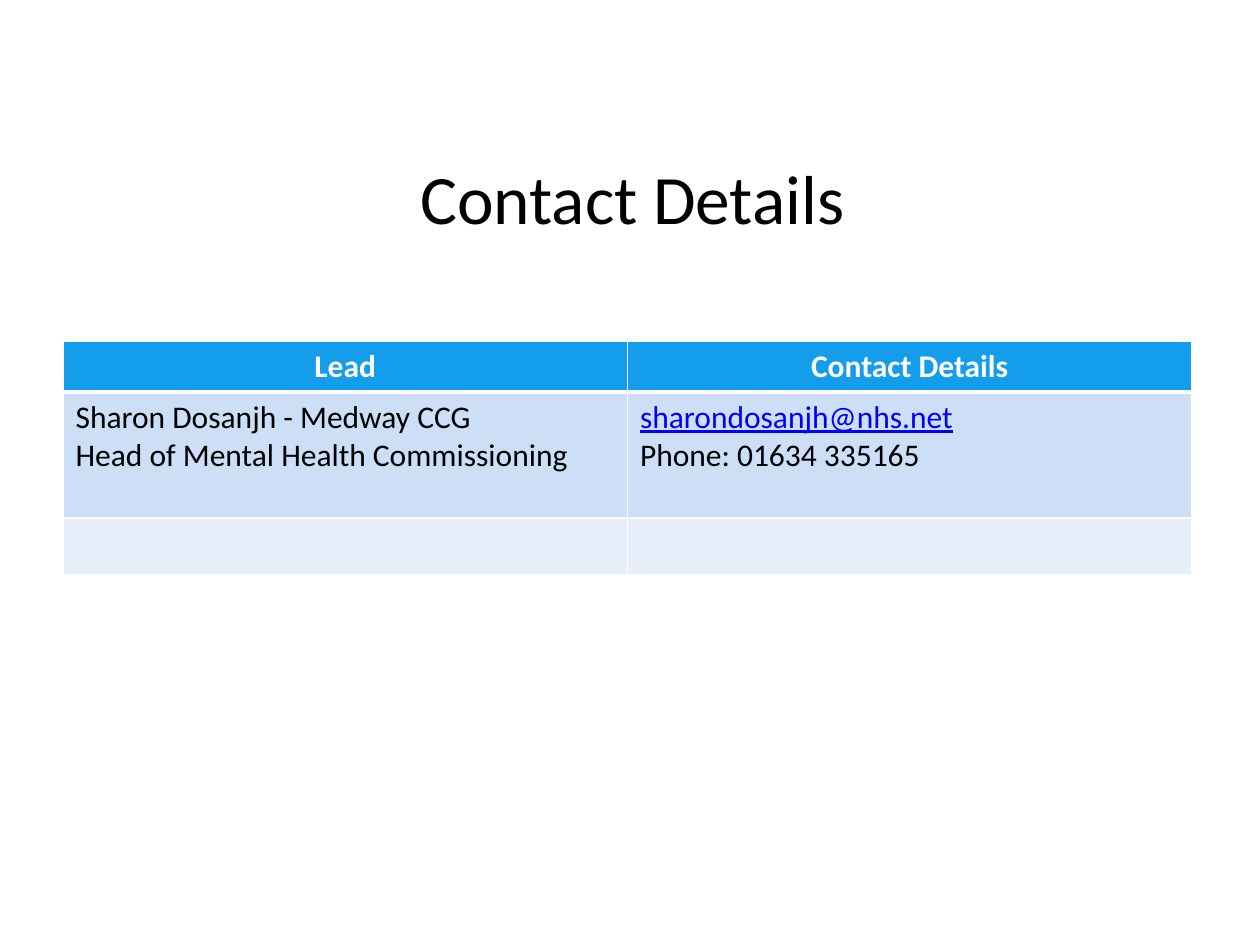
from lxml import etree
from pptx import Presentation
from pptx import util as u
from pptx.dml.color import RGBColor
from pptx.enum import text
from pptx.oxml import ns

WHITE = RGBColor(0xFF, 0xFF, 0xFF)
BLACK = RGBColor(0, 0, 0)
LINK = RGBColor(0, 0, 0xFF)
HEAD = RGBColor(0x13, 0x9D, 0xEB)
BANDS = [HEAD, RGBColor(0xCC, 0xDF, 0xF7), RGBColor(0xE7, 0xEF, 0xFB)]

ROWS = [
    ["Lead", "Contact Details"],
    ["Sharon Dosanjh - Medway CCG\nHead of Mental Health Commissioning",
     "sharondosanjh@nhs.net\nPhone: 01634 335165"],
    ["", ""],
]
HEIGHTS = [0.4, 1, 0.45]


def style(font, size, color, bold=False):
    """Set the face, size, colour and weight of a font."""
    font.name, font.size, font.bold = "Calibri", u.Pt(size), bold
    font.color.rgb = color


def add_title(slide, left, top, width, height):
    """Place the centred slide title in the given box."""
    frame = slide.shapes.add_textbox(left, top, width, height).text_frame
    frame.word_wrap = True
    frame.vertical_anchor = text.MSO_ANCHOR.MIDDLE
    frame.text = "Contact Details"
    para = frame.paragraphs[0]
    para.alignment = text.PP_ALIGN.CENTER
    style(para.runs[0].font, 39.6, BLACK)


def add_edges(cell, base):
    """Draw white cell borders with the given bottom width in points."""
    props = cell._tc.get_or_add_tcPr()
    for side, width in zip("LRTB", (1, 1, 1, base)):
        line = etree.SubElement(props, ns.qn(f"a:ln{side}"), w=str(u.Pt(width)))
        fill = etree.SubElement(line, ns.qn("a:solidFill"))
        etree.SubElement(fill, ns.qn("a:srgbClr"), val=str(WHITE))


def fill_cell(cell, words, band, head):
    """Write and format one table cell."""
    cell.text = words
    add_edges(cell, 3 if head else 1)
    cell.fill.solid()
    cell.fill.fore_color.rgb = band
    for para in cell.text_frame.paragraphs:
        para.alignment = text.PP_ALIGN.CENTER if head else text.PP_ALIGN.LEFT
        style(para.font, 18, BLACK)
        for run in para.runs:
            mail = "@" in run.text
            color = WHITE if head else LINK if mail else BLACK
            style(run.font, 18, color, head)
            run.font.underline = mail


def add_leads(slide, left, top, width, height):
    """Place the table of leads and their contact details."""
    table = slide.shapes.add_table(
        len(ROWS), len(ROWS[0]), left, top, width, height).table
    for r, (row, tall, band) in enumerate(zip(ROWS, HEIGHTS, BANDS)):
        table.rows[r].height = u.Inches(tall)
        for c, words in enumerate(row):
            fill_cell(table.cell(r, c), words, band, r == 0)


def main():
    """Build and save the contact slide."""
    deck = Presentation()
    deck.slide_width, deck.slide_height = u.Inches(10), u.Inches(7.5)
    slide = deck.slides.add_slide(deck.slide_layouts[6])
    add_title(slide, u.Inches(0.52), u.Inches(1.21), u.Inches(9), u.Inches(0.71))
    add_leads(slide, u.Inches(0.5), u.Inches(2.71), u.Inches(8.96), u.Inches(sum(HEIGHTS)))
    deck.save("out.pptx")


if __name__ == "__main__":
    main()
